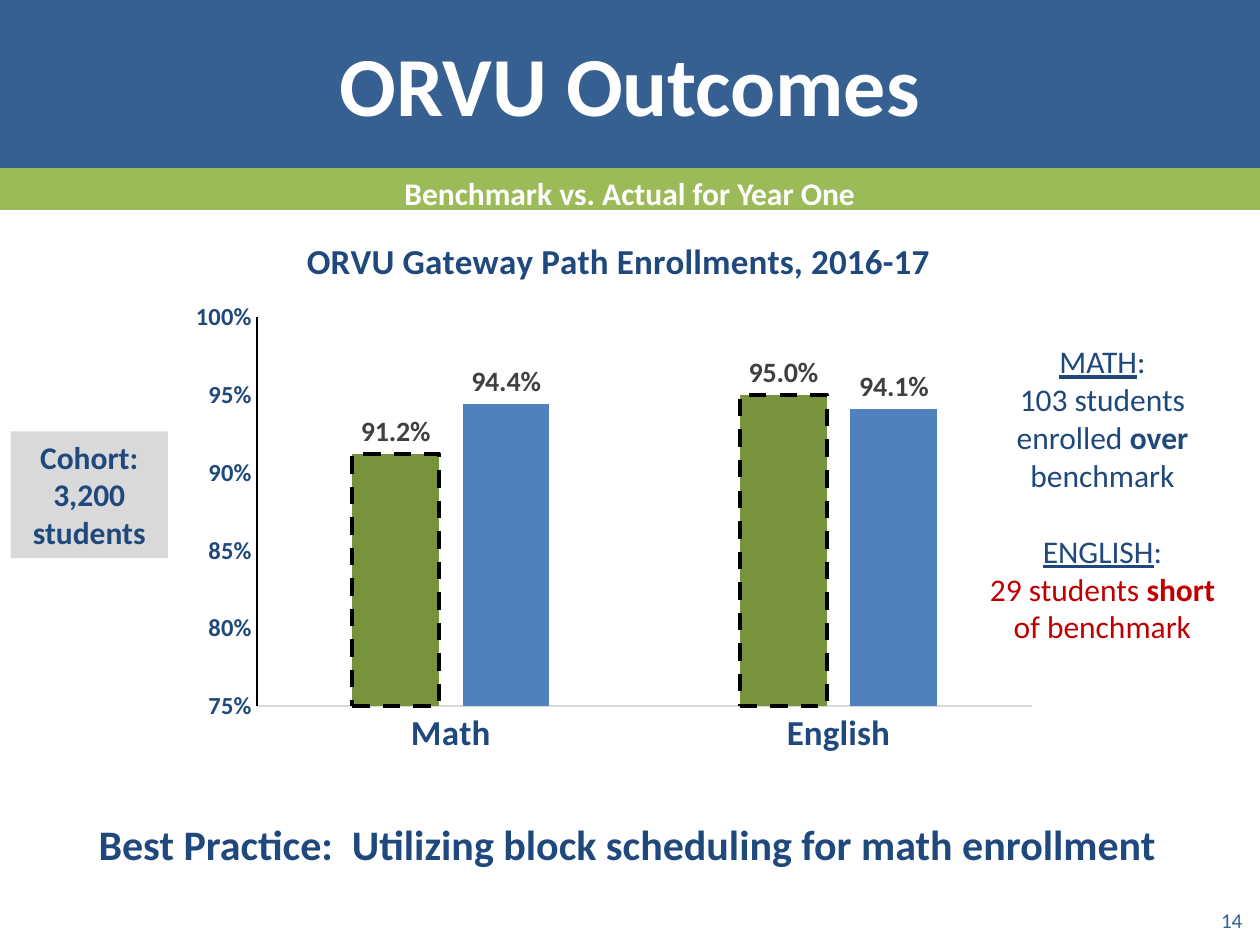
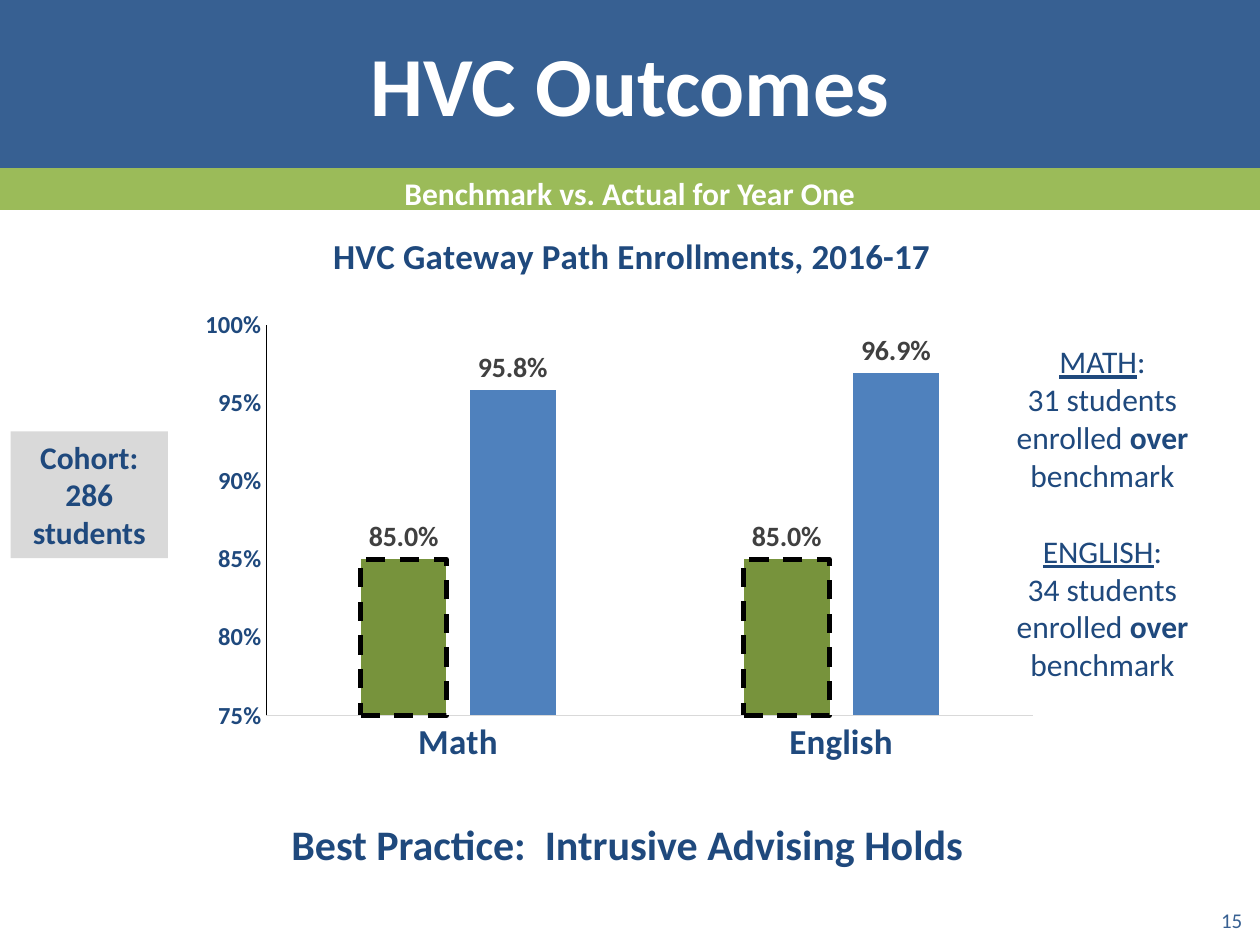
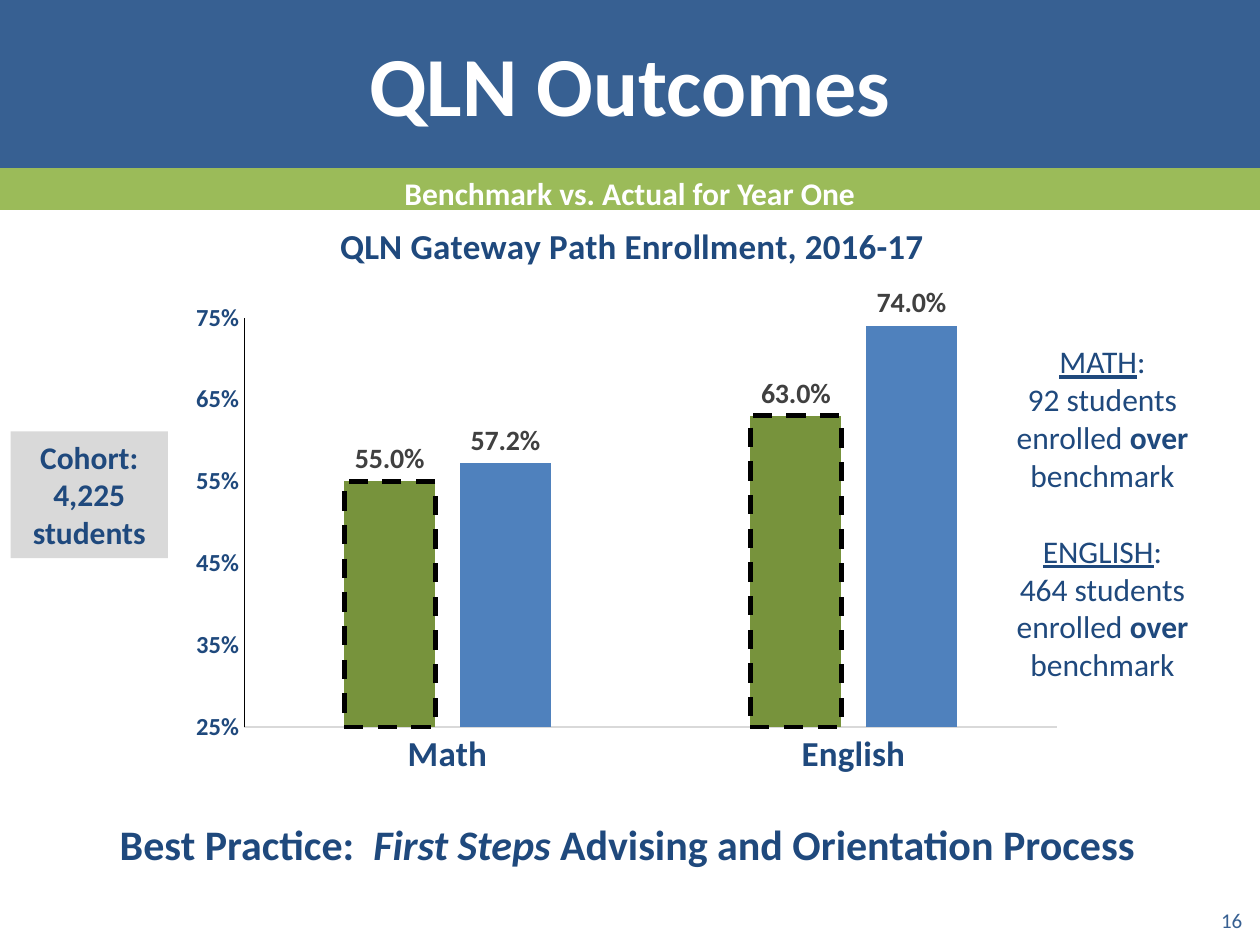
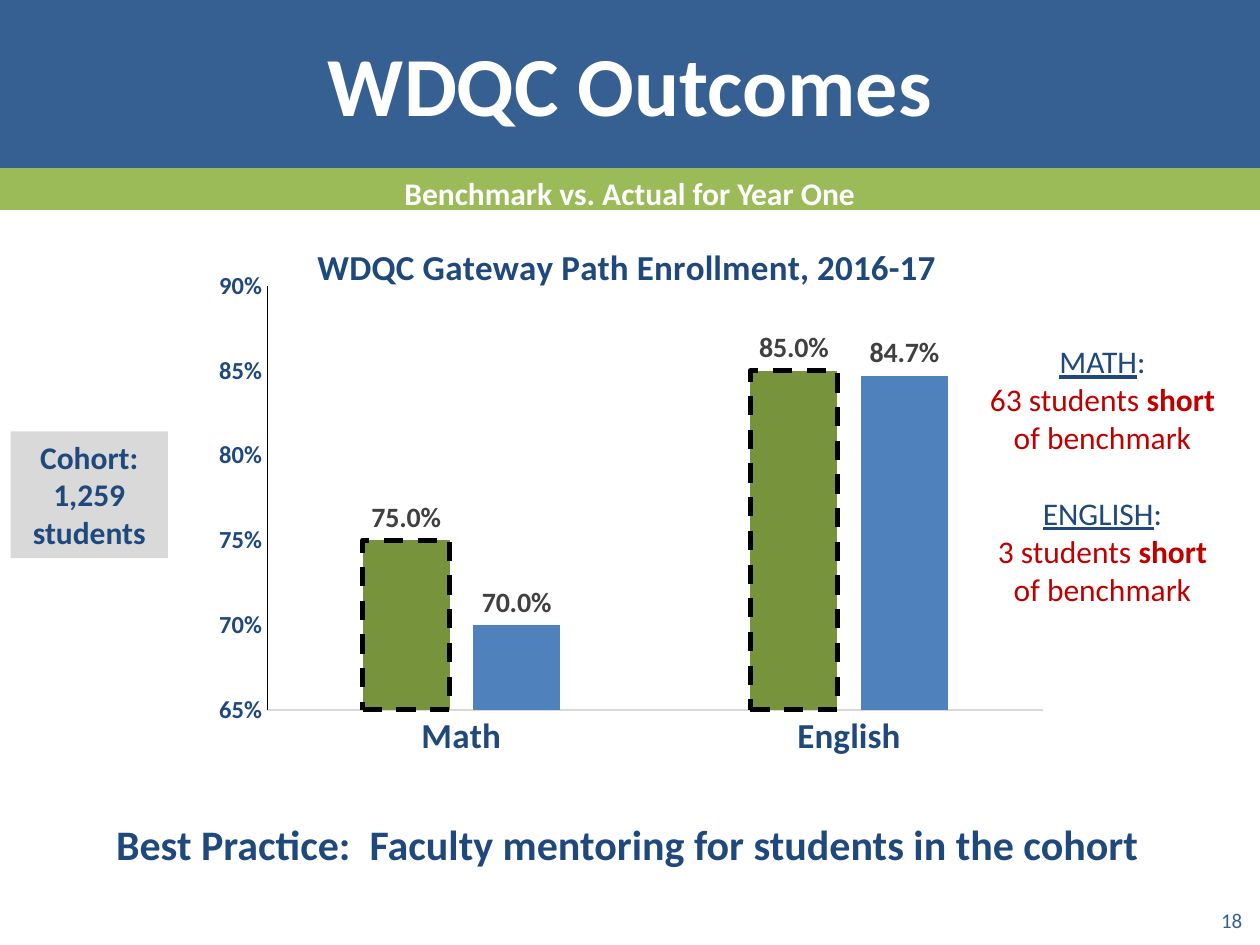
from dataclasses import dataclass
from typing import NamedTuple

from lxml.etree import SubElement
from pptx import Presentation
from pptx.chart.data import CategoryChartData
from pptx.dml.color import RGBColor
from pptx.enum.chart import XL_CHART_TYPE, XL_LABEL_POSITION, XL_TICK_MARK
from pptx.enum.dml import MSO_LINE
from pptx.enum.shapes import MSO_SHAPE
from pptx.enum.text import MSO_ANCHOR, MSO_AUTO_SIZE, PP_ALIGN
from pptx.oxml.ns import qn
from pptx.util import Pt


@dataclass(frozen=True)
class Theme:
    font: str = "Calibri"
    white: str = "FFFFFF"
    black: str = "000000"
    blue_band: str = "376092"
    green_band: str = "9BBB59"
    navy: str = "1F497D"
    red: str = "C00000"
    grey: str = "D9D9D9"
    label_grey: str = "404040"
    benchmark: str = "77933C"
    actual: str = "4F81BD"
    title_size: int = 48
    practice_size: int = 24
    heading_size: int = 20
    body_size: int = 18
    label_size: int = 16
    axis_size: int = 14
    number_size: int = 12
    chart_size: int = 10


THEME = Theme()


class Box(NamedTuple):
    """A place on the slide, in points."""
    left: float
    top: float
    width: float
    height: float

    def lengths(self) -> list[Pt]:
        return [Pt(value) for value in self]


class Layout(NamedTuple):
    """A place inside a chart, as fractions of its size."""
    x: float
    y: float
    w: float | None = None
    h: float | None = None


class Span(NamedTuple):
    text: str
    bold: bool | None = None
    italic: bool | None = None
    underline: bool | None = None


class Style(NamedTuple):
    size: int
    color: str
    bold: bool = False
    align: PP_ALIGN = PP_ALIGN.CENTER
    space_before: float = 0


class Scale(NamedTuple):
    minimum: float
    maximum: float
    step: float = 0.05


class Result(NamedTuple):
    subject: str
    students: int
    over: bool = True


@dataclass(frozen=True)
class EnrollmentChart:
    title: str
    box: Box
    scale: Scale
    benchmark: tuple[float, float]
    actual: tuple[float, float]
    title_layout: Layout
    plot_layout: Layout
    dash_width: float = 2.75


@dataclass(frozen=True)
class College:
    name: str
    number: int
    cohort: str
    chart: EnrollmentChart
    results: tuple[Result, Result]
    practice: tuple[Span, ...]


GREEN_BAND = Box(0, 0, 720, 120)
BLUE_BAND = Box(0, 0, 720, 96)
TITLE = Box(0, 15, 720, 66)
SUBTITLE = Box(0, 96, 720, 29)
COHORT = Box(6, 246.5, 90, 72.5)
RESULTS = Box(558, 192, 144, 204)
PRACTICE = Box(0, 464, 717, 36)
NUMBER = Box(549, 511, 168, 29)

TITLE_STYLE = Style(THEME.title_size, THEME.white, bold=True)
SUBTITLE_STYLE = Style(THEME.body_size, THEME.white, bold=True)
COHORT_STYLE = Style(THEME.body_size, THEME.navy, bold=True)
PRACTICE_STYLE = Style(THEME.practice_size, THEME.navy, bold=True)
NUMBER_STYLE = Style(THEME.number_size, THEME.blue_band, align=PP_ALIGN.RIGHT)

COLLEGES = (
    College(
        "ORVU", 14, "3,200",
        EnrollmentChart(
            "ORVU Gateway Path Enrollments, 2016-17", Box(102, 125, 498, 313),
            Scale(0.75, 1), (0.912, 0.95), (0.944, 0.941),
            Layout(0.14, 0.02), Layout(0.09, 0.18, 0.89, 0.71), dash_width=2.5),
        (Result("MATH", 103), Result("ENGLISH", 29, over=False)),
        (Span("Utilizing block scheduling for math enrollment"),)),
    College(
        "HVC", 15, "286",
        EnrollmentChart(
            "HVC Gateway Path Enrollments, 2016-17", Box(108, 125, 492, 319),
            Scale(0.75, 1), (0.85, 0.85), (0.958, 0.969),
            Layout(0.16, 0.01), Layout(0.09, 0.19, 0.89, 0.7)),
        (Result("MATH", 31), Result("ENGLISH", 34)),
        (Span("Intrusive Advising Holds"),)),
    College(
        "QLN", 16, "4,225",
        EnrollmentChart(
            "QLN Gateway Path Enrollment, 2016-17", Box(104, 123, 510, 325),
            Scale(0.25, 0.75, 0.1), (0.55, 0.63), (0.572, 0.74),
            Layout(0.17, 0), Layout(0.07, 0.18, 0.91, 0.72)),
        (Result("MATH", 92), Result("ENGLISH", 464)),
        (Span("First Steps ", italic=True), Span("Advising and Orientation Process"))),
    College(
        "WDQC", 18, "1,259",
        EnrollmentChart(
            "WDQC Gateway Path Enrollment, 2016-17", Box(108, 125, 498, 319),
            Scale(0.65, 0.9), (0.75, 0.85), (0.7, 0.847),
            Layout(0.14, 0.03), Layout(0.09, 0.12, 0.89, 0.76)),
        (Result("MATH", 63, over=False), Result("ENGLISH", 3, over=False)),
        (Span("Faculty mentoring for students in the cohort"),)),
)


def set_font(font, size: int, color: str, bold: bool) -> None:
    font.name = THEME.font
    font.size = Pt(size)
    font.bold = bold
    font.color.rgb = RGBColor.from_string(color)


def write(shape, lines: list[tuple[Style, tuple[Span, ...]]],
          anchor: MSO_ANCHOR = MSO_ANCHOR.TOP) -> None:
    """Fill a shape with one paragraph for each styled line."""
    frame = shape.text_frame
    frame.word_wrap = True
    frame.auto_size = MSO_AUTO_SIZE.NONE
    frame.vertical_anchor = anchor
    for index, (style, spans) in enumerate(lines):
        paragraph = frame.add_paragraph() if index else frame.paragraphs[0]
        paragraph.alignment = style.align
        paragraph.space_before = Pt(style.space_before)
        set_font(paragraph.font, style.size, style.color, style.bold)
        for span in spans:
            run = paragraph.add_run()
            run.text = span.text
            run.font.bold = span.bold
            run.font.italic = span.italic
            run.font.underline = span.underline


def add_text(slide, box: Box, lines: list[tuple[Style, tuple[Span, ...]]],
             anchor: MSO_ANCHOR = MSO_ANCHOR.TOP) -> None:
    write(slide.shapes.add_textbox(*box.lengths()), lines, anchor)


def add_rectangle(slide, box: Box, color: str):
    shape = slide.shapes.add_shape(MSO_SHAPE.RECTANGLE, *box.lengths())
    shape.shadow.inherit = False
    shape.fill.solid()
    shape.fill.fore_color.rgb = RGBColor.from_string(color)
    shape.line.fill.background()
    return shape


def add_header(slide, title: str) -> None:
    add_rectangle(slide, GREEN_BAND, THEME.green_band)
    add_rectangle(slide, BLUE_BAND, THEME.blue_band)
    placeholder = slide.shapes.title
    placeholder.left, placeholder.top, placeholder.width, placeholder.height = TITLE.lengths()
    write(placeholder, [(TITLE_STYLE, (Span(title),))])
    # The title must lie in front of the bands.
    placeholder.element.getparent().append(placeholder.element)
    add_text(slide, SUBTITLE, [(SUBTITLE_STYLE, (Span("Benchmark vs. Actual for Year One"),))])


def place(parent, layout: Layout) -> None:
    """Give a chart title or plot area a fixed position."""
    element = parent.find(qn("c:layout"))
    if element is None:
        element = SubElement(parent, qn("c:layout"))
        parent.insert(0, element)
    manual = SubElement(element, qn("c:manualLayout"))
    if layout.w is not None:
        SubElement(manual, qn("c:layoutTarget")).set("val", "inner")
    for name in ("xMode", "yMode"):
        SubElement(manual, qn(f"c:{name}")).set("val", "edge")
    for name, value in layout._asdict().items():
        if value is not None:
            SubElement(manual, qn(f"c:{name}")).set("val", str(value))


def format_axis(axis, size: int, line_color: str) -> None:
    axis.has_major_gridlines = False
    axis.major_tick_mark = axis.minor_tick_mark = XL_TICK_MARK.NONE
    set_font(axis.tick_labels.font, size, THEME.navy, True)
    axis.format.line.color.rgb = RGBColor.from_string(line_color)
    axis.format.line.width = Pt(0.75)


def add_enrollment_chart(slide, details: EnrollmentChart) -> None:
    data = CategoryChartData(number_format="0.0%")
    data.categories = ["Math", "English"]
    data.add_series("Series 1", details.benchmark)
    data.add_series("Series 2", details.actual)
    chart = slide.shapes.add_chart(
        XL_CHART_TYPE.COLUMN_CLUSTERED, *details.box.lengths(), data).chart
    set_font(chart.font, THEME.chart_size, THEME.black, False)
    chart.has_legend = False

    chart.has_title = True
    paragraph = chart.chart_title.text_frame.paragraphs[0]
    paragraph.text = details.title
    set_font(paragraph.font, THEME.heading_size, THEME.navy, True)
    place(chart.element.find(f".//{qn('c:title')}"), details.title_layout)
    place(chart.element.find(f".//{qn('c:plotArea')}"), details.plot_layout)

    format_axis(chart.category_axis, THEME.heading_size, THEME.grey)
    format_axis(chart.value_axis, THEME.axis_size, THEME.black)
    axis = chart.value_axis
    axis.minimum_scale, axis.maximum_scale, axis.major_unit = details.scale
    axis.tick_labels.number_format = "0%"
    axis.tick_labels.number_format_is_linked = False

    plot = chart.plots[0]
    plot.vary_by_categories = False
    plot.gap_width = 219
    plot.overlap = -27
    for series, color in zip(plot.series, (THEME.benchmark, THEME.actual)):
        series.format.fill.solid()
        series.format.fill.fore_color.rgb = RGBColor.from_string(color)
        labels = series.data_labels
        labels.show_value = True
        labels.position = XL_LABEL_POSITION.OUTSIDE_END
        labels.number_format = "0.0%"
        labels.number_format_is_linked = False
        set_font(labels.font, THEME.label_size, THEME.label_grey, True)
    outline = plot.series[0].format.line
    outline.color.rgb = RGBColor.from_string(THEME.black)
    outline.width = Pt(details.dash_width)
    outline.dash_style = MSO_LINE.DASH


def result_lines(result: Result, gap: float) -> list[tuple[Style, tuple[Span, ...]]]:
    heading = Style(THEME.body_size, THEME.navy, space_before=gap)
    if result.over:
        color, lead, word, tail = THEME.navy, "students enrolled", "over", "benchmark"
    else:
        color, lead, word, tail = THEME.red, "students", "short", "of benchmark"
    return [
        (heading, (Span(result.subject, underline=True), Span(":"))),
        (Style(THEME.body_size, color),
         (Span(f"{result.students} {lead} "), Span(word, bold=True), Span(f" {tail}"))),
    ]


def add_college_slide(presentation, college: College) -> None:
    slide = presentation.slides.add_slide(presentation.slide_layouts[5])
    add_header(slide, f"{college.name} Outcomes")
    add_text(slide, NUMBER, [(NUMBER_STYLE, (Span(str(college.number)),))], MSO_ANCHOR.MIDDLE)
    add_enrollment_chart(slide, college.chart)
    math, english = college.results
    add_text(slide, RESULTS, result_lines(math, 0) + result_lines(english, 22))
    write(add_rectangle(slide, COHORT, THEME.grey),
          [(COHORT_STYLE, (Span("Cohort:"),)),
           (COHORT_STYLE, (Span(f"{college.cohort} students"),))])
    add_text(slide, PRACTICE, [(PRACTICE_STYLE, (Span("Best Practice:  "), *college.practice))])


def main() -> None:
    presentation = Presentation()
    presentation.slide_width, presentation.slide_height = Pt(720), Pt(540)
    for college in COLLEGES:
        add_college_slide(presentation, college)
    presentation.save("out.pptx")


if __name__ == "__main__":
    main()
